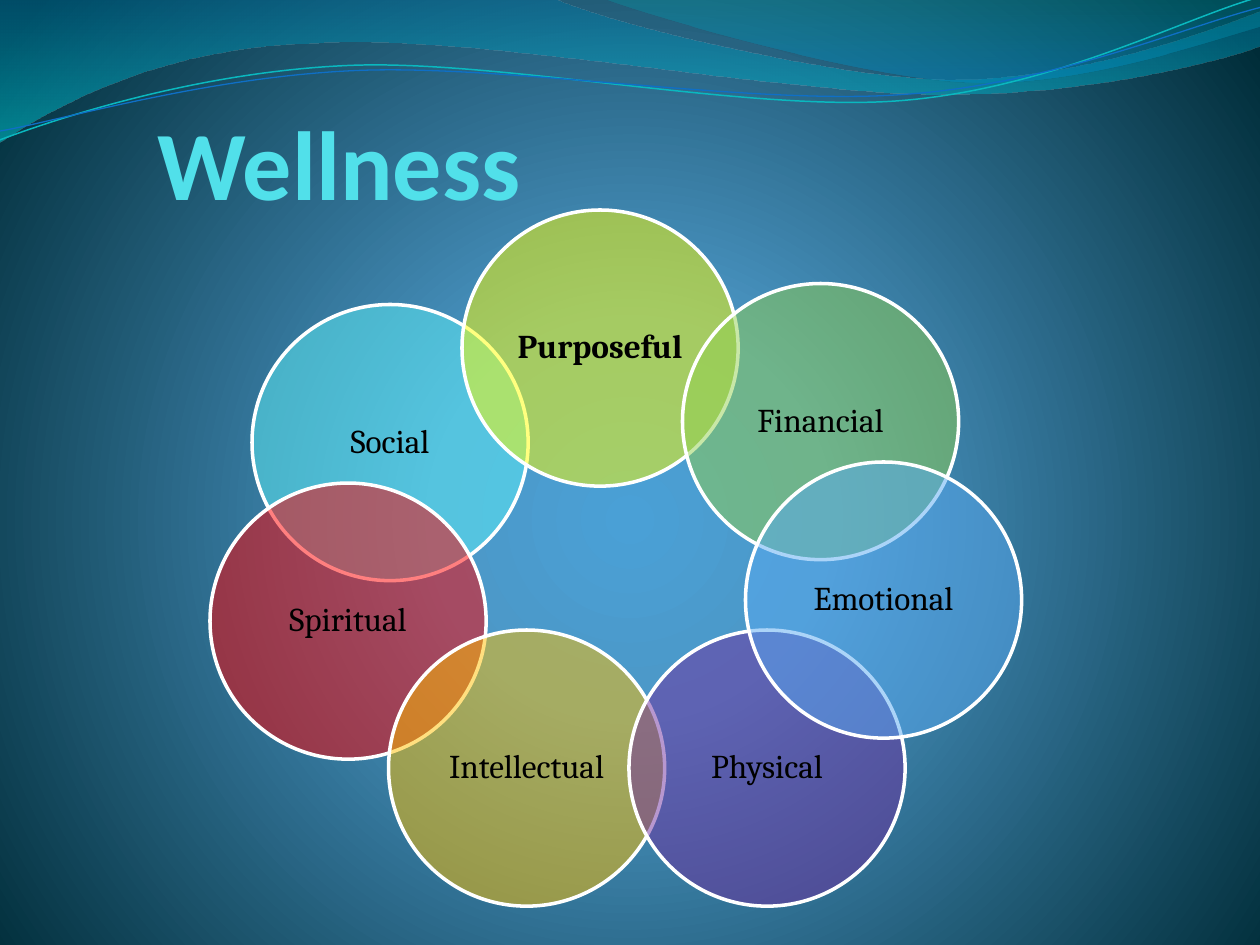
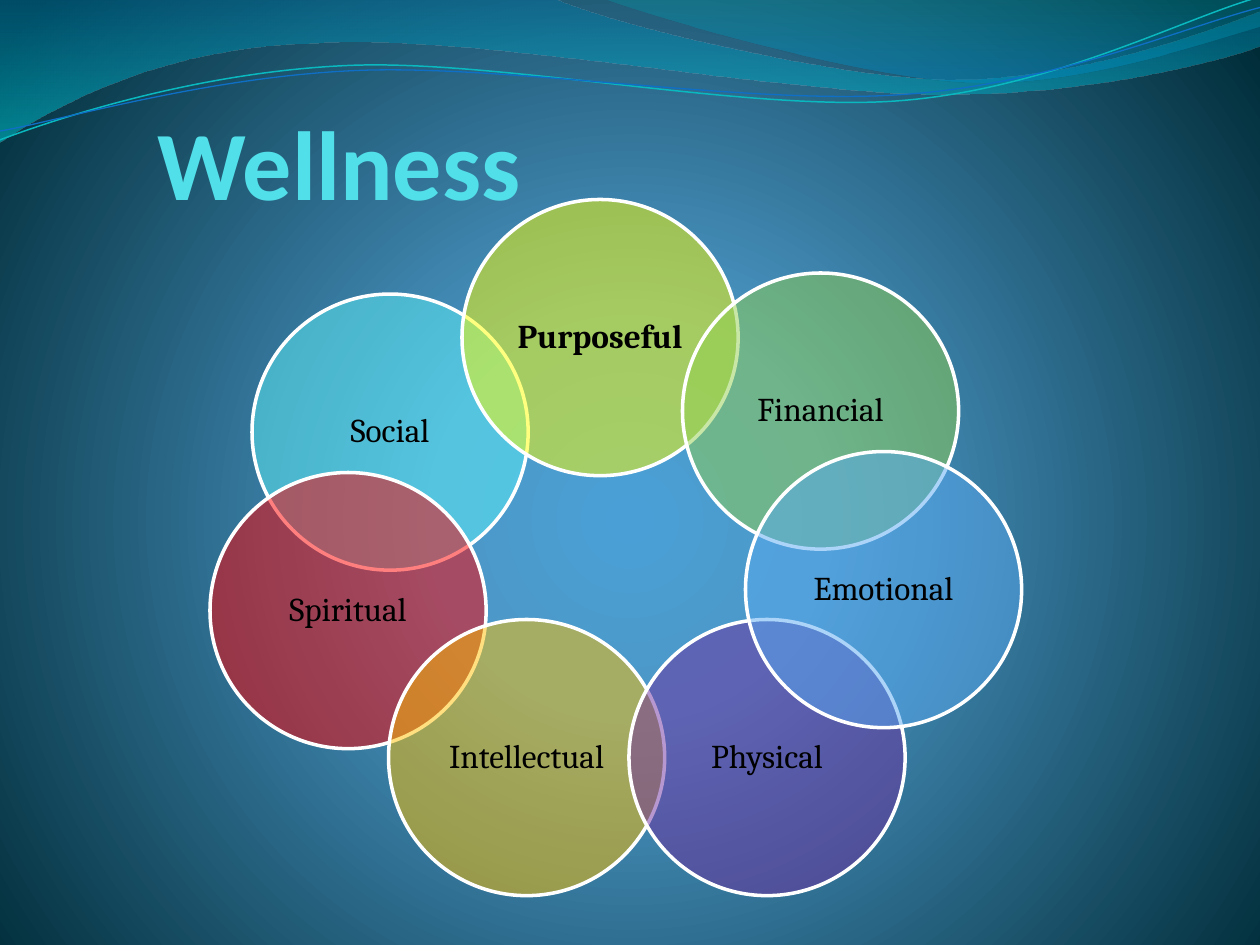
from math import cos, radians, sin

from pptx import Presentation
from pptx.dml.color import RGBColor
from pptx.enum.shapes import MSO_SHAPE
from pptx.enum.text import MSO_ANCHOR, MSO_AUTO_SIZE, PP_ALIGN
from pptx.oxml import parse_xml
from pptx.oxml.ns import nsdecls, qn
from pptx.oxml.xmlchemy import OxmlElement
from pptx.util import Pt

OVAL = MSO_SHAPE.OVAL
BASE, MID = MSO_ANCHOR.BOTTOM, MSO_ANCHOR.MIDDLE
LEFT, CENTER = PP_ALIGN.LEFT, PP_ALIGN.CENTER
FIXED = MSO_AUTO_SIZE.NONE

WHITE = RGBColor(0xFF, 0xFF, 0xFF)
BLACK = RGBColor(0x00, 0x00, 0x00)
AQUA = RGBColor(0x51, 0xE0, 0xEA)
SKY = RGBColor(0x4A, 0xA0, 0xD6)
STEEL = RGBColor(0x4C, 0x98, 0xC7)
NIGHT = RGBColor(0x00, 0x2C, 0x38)
OCEAN = RGBColor(0x00, 0x74, 0xA1)
CYAN = RGBColor(0x00, 0xC6, 0xCF)
TEAL = RGBColor(0x00, 0xA1, 0xA9)
LAKE = RGBColor(0x00, 0x8B, 0xBF)
MINT = RGBColor(0x0A, 0xB8, 0xBF)
ROYAL = RGBColor(0x0F, 0x6F, 0xC6)
ICE = RGBColor(0x5E, 0xF0, 0xF7)
RED = RGBColor(0xFF, 0x00, 0x00)
YELLOW = RGBColor(0xFF, 0xFF, 0x00)
AMBER = RGBColor(0xFF, 0xC0, 0x00)
GREEN = RGBColor(0x92, 0xD0, 0x50)
PURPLE = RGBColor(0x70, 0x30, 0xA0)
BLUE = RGBColor(0x59, 0xAA, 0xF2)

DOWN = '<a:lin ang="5400000" scaled="0"/>'
ROUND = ('<a:path path="circle"><a:fillToRect l="10000" t="110000" '
         'r="10000" b="100000"/></a:path>')

BANDS = [
    ([(0, 0), (316.8, -0.7),
      (342.7, 12.2, 478.1, 45.4, 545.8, 45.4),
      (614.2, 45.4, 689.8, 18.7, 720, 6.5), (720.7, 25.9),
      (707.8, 31.7, 626.4, 54.7, 537.1, 54),
      (447.8, 54, 275, 20.2, 185, 24.5),
      (92.9, 25.9, 33.1, 59.8, -0.7, 81.4), (0, 0)],
     [(0, OCEAN, 45), (100, CYAN, 55)]),
    ([(344.9, -0.7),
      (366.5, 7.9, 491, 44.6, 553.7, 46.8),
      (616.3, 49.7, 691.9, 23, 720, 15.1), (720, 0), (344.9, -0.7)],
     [(0, TEAL, 30), (80, LAKE, 45)]),
]
TILT = 2.7
CURVES = [
    ([(0, 79.9),
      (34.6, 67, 113.8, 41, 199.4, 37.4),
      (284.4, 33.8, 427, 64.1, 513.4, 57.6),
      (599.8, 51.1, 675.4, 10.8, 718.6, -1.4)], (359.3, 41.4), MINT, 0.85),
    ([(0, 74.9),
      (33.8, 69.1, 118.1, 43.9, 203.8, 40.3),
      (290.2, 36.7, 429.8, 60.5, 516.2, 54),
      (601.9, 48.2, 677.5, 15.1, 720, 4.3)], (359.6, 42.5), ROYAL, 0.75),
]

SIZE = 157.8
RING = [
    ("Social", 24, 54, ICE),
    ("Spiritual", 0, 156, RED),
    ("Purposeful", 144, 0, YELLOW),
    ("Intellectual", 102, 240, AMBER),
    ("Financial", 270, 42, GREEN),
    ("Physical", 239.4, 240, PURPLE),
    ("Emotional", 306, 144, BLUE),
]


def blend(fill, root, stops, tail):
    fill.solid()
    marks = "".join(
        f'<a:gs pos="{pos * 1000}"><a:srgbClr val="{tint}">'
        f'<a:alpha val="{alpha * 1000}"/></a:srgbClr></a:gs>'
        for pos, tint, alpha in stops)
    flat = root.find(".//" + qn("a:solidFill"))
    flat.getparent().replace(flat, parse_xml(
        f'<a:gradFill {nsdecls("a")} rotWithShape="1">'
        f"<a:gsLst>{marks}</a:gsLst>{tail}</a:gradFill>"))


def pairs(part):
    return list(zip(part[::2], part[1::2]))


def turn(path, hub):
    c, s = cos(radians(TILT)), sin(radians(TILT))
    made = []
    for part in path:
        flat = []
        for x, y in pairs(part):
            dx, dy = x - hub[0], y - hub[1]
            flat += [hub[0] + dx * c - dy * s, hub[1] + dx * s + dy * c]
        made.append(flat)
    return made


def outline(slide, path, close):
    spots = [(Pt(x), Pt(y)) for part in path for x, y in pairs(part)]
    pen = slide.shapes.build_freeform(*spots[0])
    pen.add_line_segments(spots[1:], close=close)
    shape = pen.convert_to_shape()
    shape.shadow.inherit = False
    lines = iter(list(shape.element.iter(qn("a:lnTo"))))
    for part in path[1:]:
        group = [next(lines) for pair in pairs(part)]
        if len(group) == 3:
            bend = OxmlElement("a:cubicBezTo")
            group[0].addprevious(bend)
            for line in group:
                bend.append(line[0])
                line.getparent().remove(line)
    return shape


def add_waves(slide, layout):
    parts = []
    for path, stops in BANDS:
        band = outline(slide, path, True)
        band.line.fill.background()
        blend(band.fill, band.element.spPr, stops, DOWN)
        parts.append(band)
    for path, hub, tint, width in CURVES:
        curve = outline(slide, turn(path, hub), False)
        curve.rotation = -TILT
        curve.fill.background()
        curve.line.color.rgb = tint
        curve.line.width = Pt(width)
        parts.append(curve)
    for num, part in enumerate(parts, 100):
        part.element.nvSpPr.cNvPr.set("id", str(num))
        layout.shapes.element.append(part.element)


def add_title(slide, text, left, top, width, height):
    title = slide.shapes.title
    title.left, title.top = Pt(left), Pt(top)
    title.width, title.height = Pt(width), Pt(height)
    frame = title.text_frame
    frame.text = text
    frame.auto_size = FIXED
    frame.vertical_anchor = BASE
    frame.margin_left = frame.margin_top = frame.margin_bottom = 0
    frame.margin_right = Pt(1.44)
    line = frame.paragraphs[0]
    line.alignment = LEFT
    font = line.font
    font.name, font.size, font.bold = "Calibri", Pt(56), True
    font.color.rgb = AQUA


def add_disc(slide, text, left, top, tint):
    disc = slide.shapes.add_shape(
        OVAL, Pt(left), Pt(top), Pt(SIZE), Pt(SIZE))
    disc.shadow.inherit = False
    disc.fill.solid()
    disc.fill.fore_color.rgb = tint
    alpha = OxmlElement("a:alpha")
    alpha.set("val", "50000")
    disc.element.spPr.find(".//" + qn("a:srgbClr")).append(alpha)
    disc.line.color.rgb = WHITE
    disc.line.width = Pt(2)
    frame = disc.text_frame
    frame.text = text
    frame.word_wrap = True
    frame.vertical_anchor = MID
    frame.margin_left = frame.margin_right = Pt(5.76)
    frame.margin_top = frame.margin_bottom = Pt(5.76)
    line = frame.paragraphs[0]
    line.alignment = CENTER
    line.line_spacing = 0.9
    font = line.font
    font.name, font.size = "Cambria", Pt(19)
    font.bold = text == "Purposeful"
    font.color.rgb = BLACK


def add_ring(slide, left, top):
    for text, x, y, tint in RING:
        add_disc(slide, text, left + x, top + y, tint)


def main():
    deck = Presentation()
    deck.slide_width, deck.slide_height = Pt(720), Pt(540)
    layout = deck.slide_layouts[0]
    blend(layout.background.fill, layout.element,
          [(0, SKY, 100), (25, STEEL, 100), (100, NIGHT, 100)], ROUND)
    for num, top in enumerate((120, 114)):
        slide = deck.slides.add_slide(layout)
        spare = slide.placeholders[1].element
        spare.getparent().remove(spare)
        if num == 0:
            add_waves(slide, layout)
        add_title(slide, "Wellness", 90, 57, 618.5, 69)
        add_ring(slide, 120, top)
    deck.save("out.pptx")


if __name__ == "__main__":
    main()
